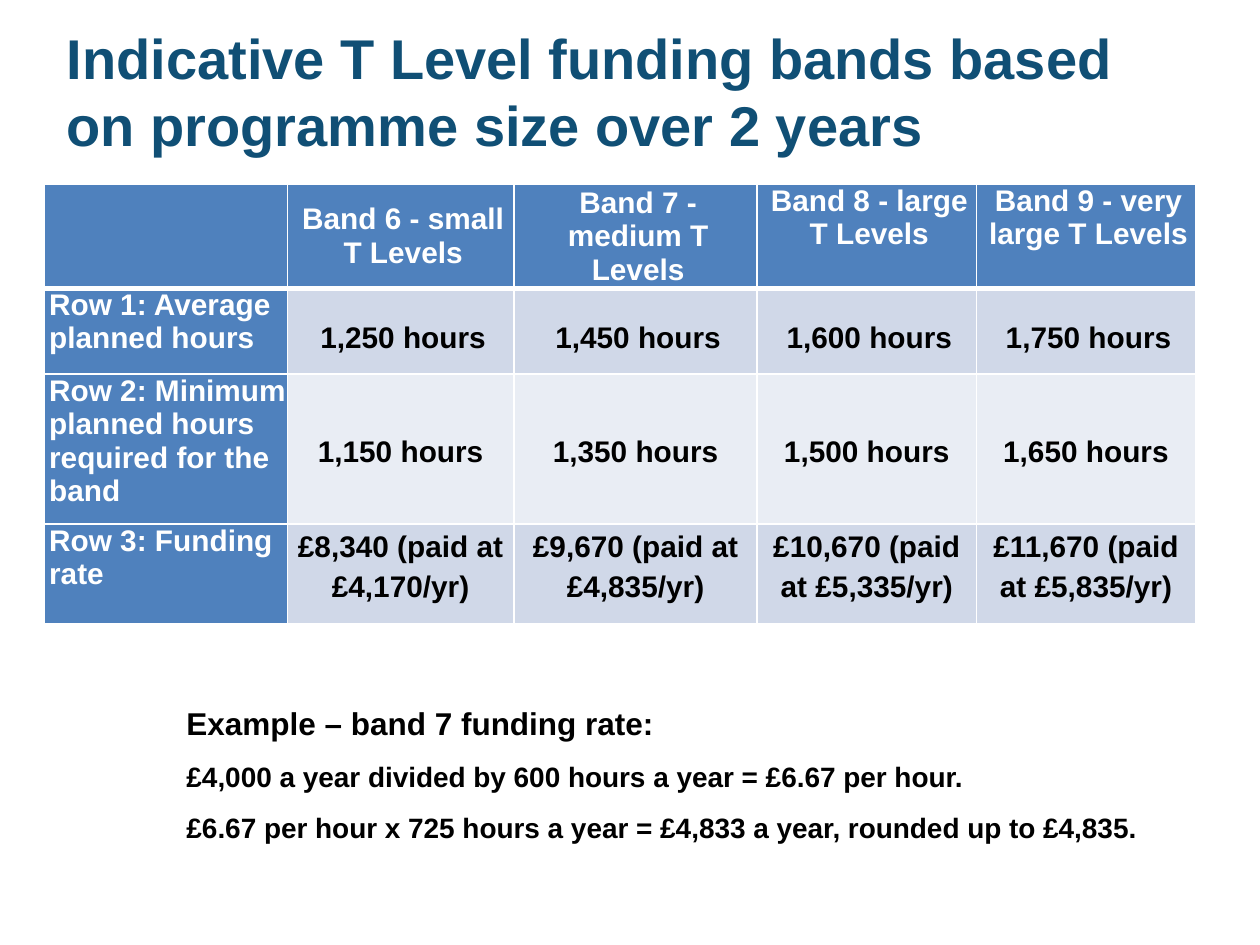
"""Build the slide of indicative T Level funding bands."""
import dataclasses

import pptx
import pptx.dml.color
import pptx.enum.text
import pptx.oxml.ns
import pptx.util
from lxml import etree

Inches = pptx.util.Inches
Pt = pptx.util.Pt
ALIGN = pptx.enum.text.PP_ALIGN
ANCHOR = pptx.enum.text.MSO_ANCHOR

BLUE, PALE, PALER = "4F81BD", "D0D8E8", "E9EDF4"
WHITE, BLACK, NAVY = "FFFFFF", "000000", "104F75"
COLUMN_WIDTHS = (1.93, 1.8, 1.93, 1.74, 1.74)
HEADER_LINE, THIN_LINE = 3, 1


@dataclasses.dataclass(frozen=True)
class CellStyle:
    fill: str
    color: str
    align: ALIGN = ALIGN.CENTER
    anchor: ANCHOR = ANCHOR.TOP
    left: float = 0
    top: float = 0
    spacing: float = 1.0
    after: float = 3


@dataclasses.dataclass(frozen=True)
class Row:
    height: float
    texts: tuple[str, ...]
    styles: tuple[CellStyle, ...]


LABEL = CellStyle(BLUE, WHITE, ALIGN.LEFT, left=0.04)
BAND = CellStyle(BLUE, WHITE, left=0.04)
BAND_MIDDLE = dataclasses.replace(BAND, anchor=ANCHOR.MIDDLE)
AVERAGE = CellStyle(PALE, BLACK, left=0.04, top=0.26)
MINIMUM = CellStyle(PALER, BLACK, top=0.43, spacing=1.2, after=12)
RATE = CellStyle(PALE, BLACK, spacing=1.2, after=12)

ROWS = (
    Row(0.83, ("", "Band 6 - small T Levels", "Band 7 - medium T Levels",
               "Band 8 - large T Levels", "Band 9 - very large T Levels"),
        (LABEL, BAND_MIDDLE, BAND_MIDDLE, BAND, BAND)),
    Row(0.68, ("Row 1: Average planned hours", "1,250 hours", "1,450 hours",
               "1,600 hours", "1,750 hours"),
        (LABEL,) + (AVERAGE,) * 4),
    Row(1.19, ("Row 2: Minimum planned hours required for the band", "1,150 hours",
               "1,350 hours", "1,500 hours", "1,650 hours"),
        (LABEL,) + (MINIMUM,) * 4),
    Row(0.79, ("Row 3: Funding rate", "£8,340 (paid at £4,170/yr)",
               "£9,670 (paid at £4,835/yr)", "£10,670 (paid at £5,335/yr)",
               "£11,670 (paid at £5,835/yr)"),
        (LABEL,) + (RATE,) * 4),
)

EXAMPLE = (
    ("Example – band 7 funding rate:", 18),
    ("£4,000 a year divided by 600 hours a year = £6.67 per hour.", 16),
    ("£6.67 per hour x 725 hours a year = £4,833 a year, rounded up to £4,835.", 16),
)


def rgb(value: str) -> pptx.dml.color.RGBColor:
    return pptx.dml.color.RGBColor.from_string(value)


def place(box, left: float, top: float, width: float, height: float) -> None:
    box.left, box.top = Inches(left), Inches(top)
    box.width, box.height = Inches(width), Inches(height)


def format_runs(para, size: float, color: str) -> None:
    for span in para.runs:
        span.font.name, span.font.size, span.font.bold = "Arial", Pt(size), True
        span.font.color.rgb = rgb(color)


def add_border(cell, side: str, width: float) -> None:
    qn = pptx.oxml.ns.qn
    line = etree.SubElement(cell._tc.get_or_add_tcPr(), qn(f"a:ln{side}"),
                            w=str(Pt(width)))
    fill = etree.SubElement(line, qn("a:solidFill"))
    etree.SubElement(fill, qn("a:srgbClr"), val=WHITE)


def fill_cell(cell, text: str, style: CellStyle, borders: dict[str, float]) -> None:
    for side, width in borders.items():
        add_border(cell, side, width)
    cell.fill.solid()
    cell.fill.fore_color.rgb = rgb(style.fill)
    cell.margin_left, cell.margin_top = Inches(style.left), Inches(style.top)
    cell.margin_right = cell.margin_bottom = 0
    cell.vertical_anchor = style.anchor
    cell.text_frame.text = text
    para = cell.text_frame.paragraphs[0]
    para.alignment = style.align
    para.line_spacing = style.spacing
    para.space_after = Pt(style.after)
    format_runs(para, 17, style.color)


def add_band_table(page) -> None:
    height = sum(row.height for row in ROWS)
    frame = page.shapes.add_table(len(ROWS), len(COLUMN_WIDTHS), Inches(0.35), Inches(1.46),
                                  Inches(sum(COLUMN_WIDTHS)), Inches(height))
    table = frame.table
    table.first_col = True
    for column, width in zip(table.columns, COLUMN_WIDTHS):
        column.width = Inches(width)
    for index, row in enumerate(ROWS):
        table.rows[index].height = Inches(row.height)
        borders = {
            "L": THIN_LINE, "R": THIN_LINE,
            "T": HEADER_LINE if index == 1 else THIN_LINE,
            "B": HEADER_LINE if index == 0 else THIN_LINE,
        }
        for cell, text, style in zip(table.rows[index].cells, row.texts, row.styles):
            fill_cell(cell, text, style, borders)


def write_title(box) -> None:
    place(box, 0.43, 0.13, 9.06, 1.18)
    box.text_frame.text = "Indicative T Level funding bands based on programme size over 2 years"
    box.text_frame.vertical_anchor = ANCHOR.MIDDLE
    box.text_frame.auto_size = pptx.enum.text.MSO_AUTO_SIZE.NONE
    para = box.text_frame.paragraphs[0]
    para.alignment = ALIGN.LEFT
    format_runs(para, 32, NAVY)


def write_example(box) -> None:
    place(box, 1.38, 5.48, 8.27, 1.34)
    box.text_frame.text = "\n".join(text for text, _ in EXAMPLE)
    box.text_frame.auto_size = pptx.enum.text.MSO_AUTO_SIZE.NONE
    for para, (_, size) in zip(box.text_frame.paragraphs, EXAMPLE):
        para.line_spacing = 1.2
        para.space_before, para.space_after = Pt(0), Pt(6)
        format_runs(para, size, BLACK)
        properties = para._p.get_or_add_pPr()
        properties.set("marL", "0")
        properties.set("indent", "0")
        etree.SubElement(properties, pptx.oxml.ns.qn("a:buNone"))


def main() -> None:
    deck = pptx.Presentation()
    deck.slide_width, deck.slide_height = Inches(10), Inches(7.5)
    page = deck.slides.add_slide(deck.slide_layouts[1])
    write_title(page.shapes.title)
    write_example(page.placeholders[1])
    add_band_table(page)
    deck.save("out.pptx")


if __name__ == "__main__":
    main()
